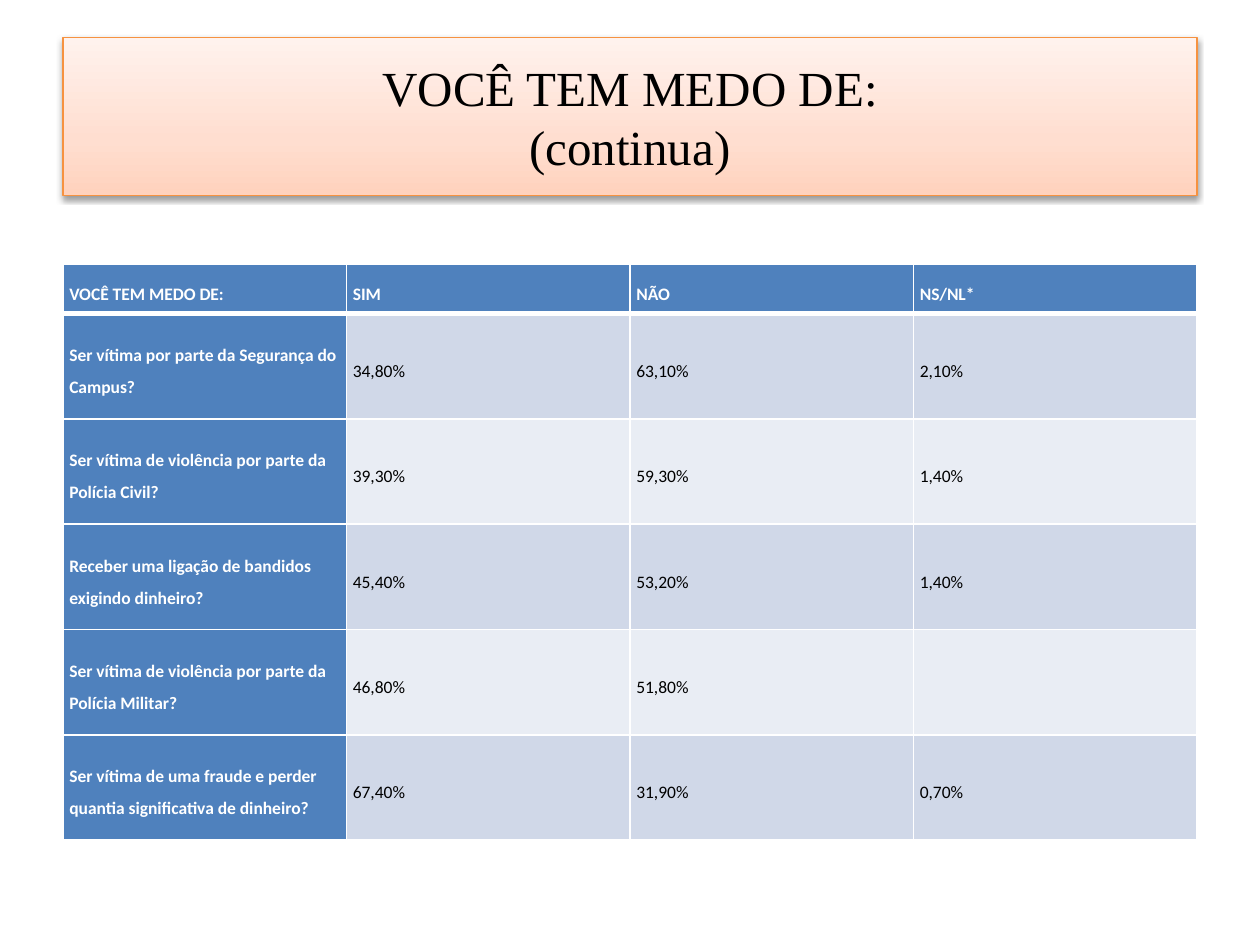
from copy import deepcopy
from dataclasses import dataclass

from lxml.etree import SubElement
from pptx import Presentation
from pptx.dml.color import RGBColor
from pptx.enum.text import MSO_ANCHOR, MSO_AUTO_SIZE, PP_ALIGN
from pptx.oxml.ns import qn
from pptx.util import Pt

TITLE = "VOCÊ TEM MEDO DE:\v(continua)"
HEADER = ("VOCÊ TEM MEDO DE:", "SIM", "NÃO", "NS/NL*")
ANSWERS = [
    ("Ser vítima por parte da Segurança do Campus?", "34,80%", "63,10%", "2,10%"),
    ("Ser vítima de violência por parte da Polícia Civil?", "39,30%", "59,30%", "1,40%"),
    ("Receber uma ligação de bandidos exigindo dinheiro?", "45,40%", "53,20%", "1,40%"),
    ("Ser vítima de violência por parte da Polícia Militar?", "46,80%", "51,80%", ""),
    ("Ser vítima de uma fraude e perder quantia significativa de dinheiro?",
     "67,40%", "31,90%", "0,70%"),
]


@dataclass(frozen=True)
class Theme:
    title_font: str = "Times New Roman"
    table_font: str = "Calibri"
    title_size: int = 28
    table_size: int = 10
    text: str = "000000"
    white: str = "FFFFFF"
    heading: str = "4F81BD"
    bands: tuple = ("D0D8E8", "E9EDF4")
    title_line: str = "F69240"
    title_stops: tuple = ((0, "FFD2BD"), (0.35, "FFDED0"), (1, "FFF2ED"))


THEME = Theme()
LEFT, WIDTH = 36, 648
TITLE_TOP, TITLE_HEIGHT = 21.6, 90
TABLE_TOP, HEADER_HEIGHT, ROW_HEIGHT = 151.2, 28, 60.2
BORDER, HEADER_BORDER = 1, 3


def rgb(color):
    return RGBColor.from_string(color)


def style_runs(paragraph, font, size, color, bold=False):
    for run in paragraph.runs:
        run.font.name = font
        run.font.size = Pt(size)
        run.font.bold = bold
        run.font.color.rgb = rgb(color)


def add_color(parent, color):
    return SubElement(parent, qn("a:srgbClr"), val=color)


def fill_title(title):
    title.fill.gradient()
    title.fill.gradient_angle = 90
    stop_list = title._element.spPr.find(".//" + qn("a:gsLst"))
    stop_list.insert(1, deepcopy(stop_list[0]))
    for stop, (position, color) in zip(title.fill.gradient_stops, THEME.title_stops):
        stop.position = position
        stop.color.rgb = rgb(color)


def add_shadow(shape):
    effects = SubElement(shape._element.spPr, qn("a:effectLst"))
    shadow = SubElement(effects, qn("a:outerShdw"), blurRad=str(Pt(3.1)),
                        dist=str(Pt(1.6)), dir="5400000", rotWithShape="0")
    SubElement(add_color(shadow, "000000"), qn("a:alpha"), val="38000")


def build_title(title):
    title.left, title.top = Pt(LEFT), Pt(TITLE_TOP)
    title.width, title.height = Pt(WIDTH), Pt(TITLE_HEIGHT)
    fill_title(title)
    title.line.color.rgb = rgb(THEME.title_line)
    title.line.width = Pt(0.75)
    add_shadow(title)
    frame = title.text_frame
    frame.text = TITLE
    frame.word_wrap = True
    frame.auto_size = MSO_AUTO_SIZE.NONE
    frame.vertical_anchor = MSO_ANCHOR.MIDDLE
    paragraph = frame.paragraphs[0]
    paragraph.alignment = PP_ALIGN.CENTER
    style_runs(paragraph, THEME.title_font, THEME.title_size, THEME.text)
    for line_break in paragraph._p.findall(qn("a:br")):
        SubElement(line_break, qn("a:rPr"), sz=str(THEME.title_size * 100))


def set_borders(cell, top, bottom):
    properties = cell._tc.get_or_add_tcPr()
    for side, width in (("L", BORDER), ("R", BORDER), ("T", top), ("B", bottom)):
        border = SubElement(properties, qn(f"a:ln{side}"), w=str(Pt(width)))
        add_color(SubElement(border, qn("a:solidFill")), THEME.white)


def format_cell(cell, row, column):
    set_borders(cell, top=HEADER_BORDER if row == 1 else BORDER,
                bottom=HEADER_BORDER if row == 0 else BORDER)
    is_heading = row == 0 or column == 0
    cell.fill.solid()
    cell.fill.fore_color.rgb = rgb(THEME.heading if is_heading else THEME.bands[(row - 1) % 2])
    cell.margin_left = cell.margin_right = Pt(3.6)
    cell.margin_top = cell.margin_bottom = 0
    cell.vertical_anchor = MSO_ANCHOR.MIDDLE
    paragraph = cell.text_frame.paragraphs[0]
    paragraph.line_spacing = 1.5
    style_runs(paragraph, THEME.table_font, THEME.table_size,
               THEME.white if is_heading else THEME.text, bold=is_heading)


def build_table(slide):
    rows = [HEADER, *ANSWERS]
    height = HEADER_HEIGHT + ROW_HEIGHT * len(ANSWERS)
    table = slide.shapes.add_table(len(rows), len(HEADER), Pt(LEFT), Pt(TABLE_TOP),
                                   Pt(WIDTH), Pt(height)).table
    table.first_col = True
    for column in table.columns:
        column.width = Pt(WIDTH / len(HEADER))
    for row, values in enumerate(rows):
        table.rows[row].height = Pt(ROW_HEIGHT if row else HEADER_HEIGHT)
        for column, value in enumerate(values):
            cell = table.cell(row, column)
            cell.text = value
            format_cell(cell, row, column)


def main():
    presentation = Presentation()
    presentation.slide_width, presentation.slide_height = Pt(720), Pt(540)
    slide = presentation.slides.add_slide(presentation.slide_layouts[5])
    build_title(slide.shapes.title)
    build_table(slide)
    presentation.save("out.pptx")


if __name__ == "__main__":
    main()
